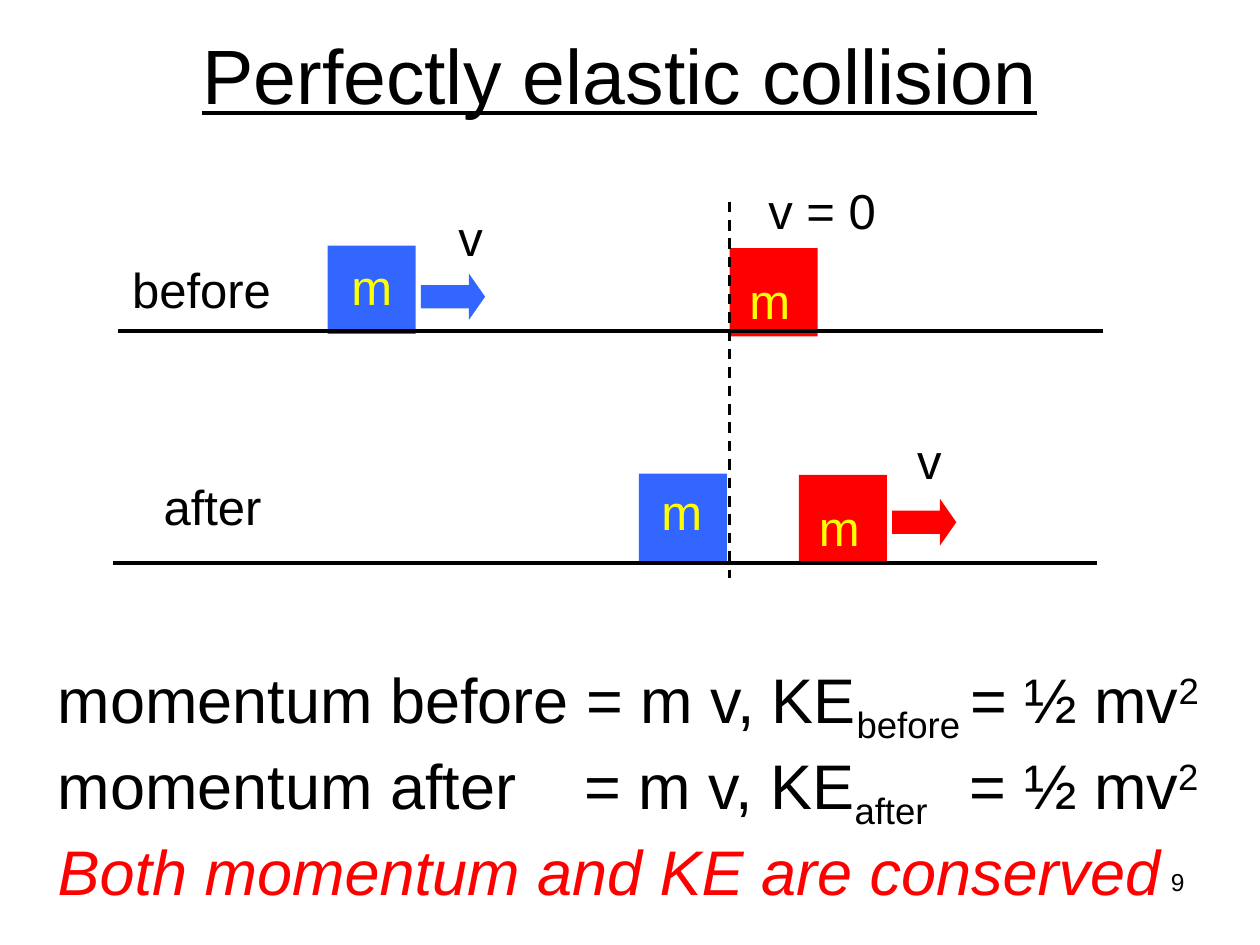
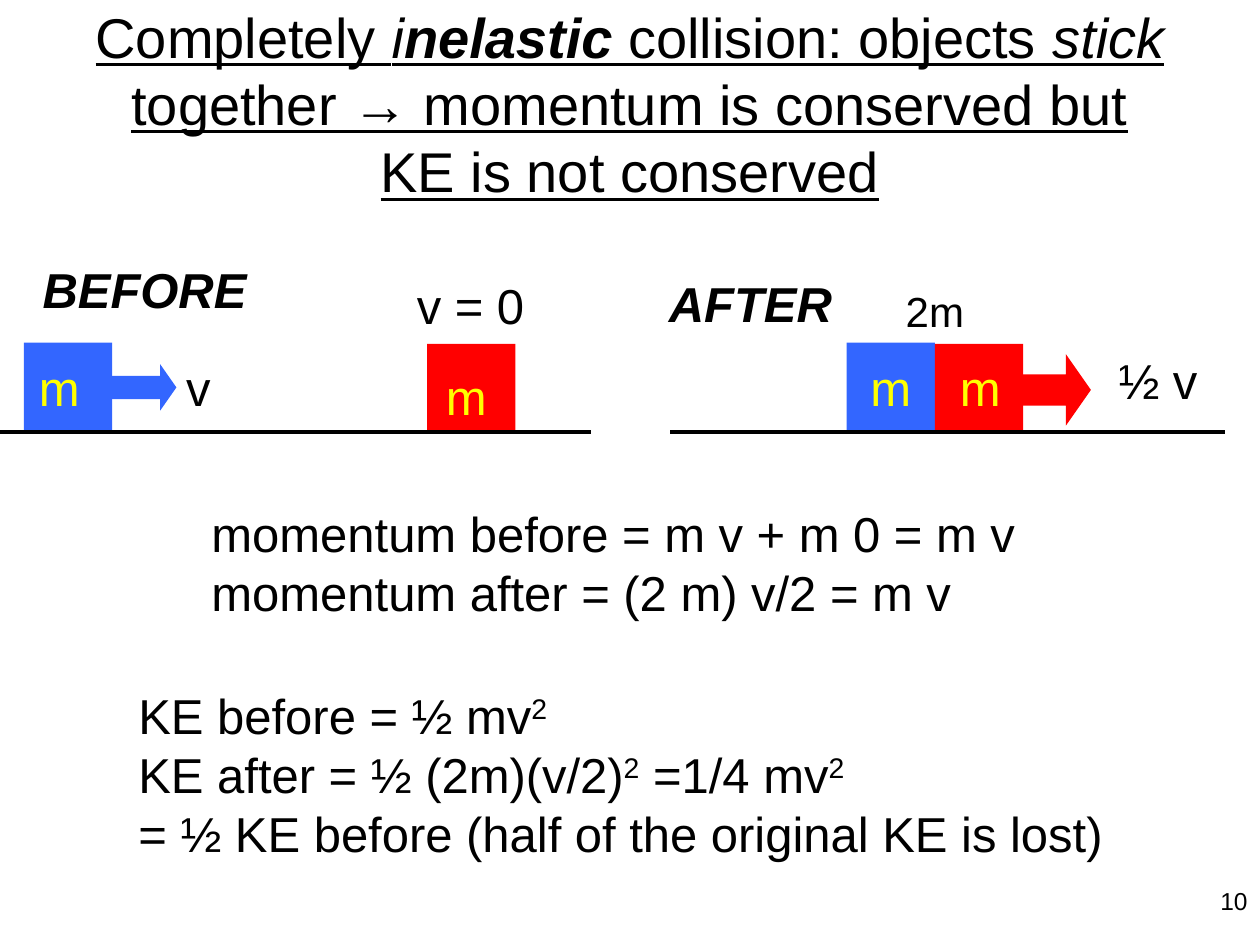
from dataclasses import dataclass

from lxml.etree import SubElement
from pptx import Presentation
from pptx.dml.color import RGBColor
from pptx.enum.dml import MSO_LINE_DASH_STYLE as Dash
from pptx.enum.shapes import MSO_CONNECTOR as Connector, MSO_SHAPE as Shape
from pptx.enum.text import MSO_ANCHOR as Anchor, MSO_AUTO_SIZE as AutoSize, PP_ALIGN as Align
from pptx.oxml.ns import qn
from pptx.util import Pt

PX = 9144  # 100 px to the inch


@dataclass(frozen=True)
class Theme:
    font: str = "Arial"
    ink: RGBColor = RGBColor(0x00, 0x00, 0x00)
    paper: RGBColor = RGBColor(0xFF, 0xFF, 0xFF)
    blue: RGBColor = RGBColor(0x33, 0x66, 0xFF)
    red: RGBColor = RGBColor(0xFF, 0x00, 0x00)
    yellow: RGBColor = RGBColor(0xFF, 0xFF, 0x00)
    title: int = 44
    long_title: int = 32
    formula: int = 36
    body: int = 28
    small: int = 24
    number: int = 14


theme = Theme()
BLOCK = 70
ARROW = (51, 37)
LABEL_HEIGHT = 57
SUB, SUPER = {"baseline": -25000}, {"baseline": 30000}
ITALIC, STRONG = {"italic": True}, {"bold": True, "italic": True}


def write(frame, paragraphs, size, color=theme.ink, align=Align.LEFT, **shared):
    """Fill a text frame; a paragraph is a list of (text, style) spans."""
    for index, spans in enumerate(paragraphs):
        para = frame.paragraphs[0] if index == 0 else frame.add_paragraph()
        para.alignment = align
        for text, style in spans:
            style = {**shared, **style}
            for line_index, line in enumerate(text.split("\n")):
                if line_index:
                    para.add_line_break()
                span = para.add_run()
                span.text = line
                span.font.name = theme.font
                span.font.size = Pt(size)
                span.font.color.rgb = style.get("color", color)
                span.font.bold = style.get("bold", False)
                span.font.italic = style.get("italic", False)
                span.font.underline = style.get("underline", False)
                if "baseline" in style:
                    span.font._element.set("baseline", str(style["baseline"]))


def add_text(page, at, paragraphs, size, wrap=True, fit=True, **style):
    box = page.shapes.add_textbox(*(value * PX for value in at))
    box.text_frame.word_wrap = wrap
    box.text_frame.auto_size = AutoSize.SHAPE_TO_FIT_TEXT if fit else AutoSize.NONE
    write(box.text_frame, paragraphs, size, **style)
    return box


deck = Presentation()
deck.slide_width, deck.slide_height = 1000 * PX, 750 * PX

# Blocks: left, top, colour, left and top of the "m".
# Arrows: left, top, colour, outline width. Tracks: left, right, y.
# Labels: left, top, width, text, style.
scenes = [
    {
        "title": [("Perfectly elastic collision", {})],
        "title_at": (42, 10, 900, 97),
        "title_size": theme.title,
        "blocks": [
            (260, 195, theme.blue, 269, 199),
            (579, 197, theme.red, 585, 210),
            (507, 376, theme.blue, 515, 377),
            (634, 377, theme.red, 640, 390),
        ],
        "arrows": [(334, 217, theme.blue, 0), (708, 396, theme.red, 0)],
        "tracks": [(94, 875, 263), (90, 871, 447)],
        "labels": [
            (354, 160, 40, "v", {}),
            (95, 201, 131, "before", {}),
            (718, 337, 40, "v", {}),
            (120, 373, 98, "after", {}),
            (600, 138, 106, "v = 0", {}),
        ],
        "number": ("9", (717, 683, 233, 52)),
    },
    {
        "title": [
            ("Completely ", {}),
            ("i", ITALIC),
            ("nelastic ", STRONG),
            ("collision: objects ", {}),
            ("stick", ITALIC),
            (" together → momentum is conserved but\nKE is not conserved", {}),
        ],
        "title_at": (0, 0, 1000, 164),
        "title_size": theme.long_title,
        "blocks": [
            (19, 272, theme.blue, 21, 279),
            (339, 273, theme.red, 344, 286),
            (672, 272, theme.blue, 681, 279),
            (742, 273, theme.red, 752, 279),
        ],
        "arrows": [(89, 289, theme.blue, 0), (811, 291, theme.red, 4.5)],
        "tracks": [(0, 469, 343), (532, 972, 343)],
        "labels": [
            (138, 279, 40, "v", {}),
            (24, 201, 184, "BEFORE", STRONG),
            (521, 212, 151, "AFTER", STRONG),
            (321, 214, 106, "v = 0", {}),
            (878, 273, 83, "½ v", {}),
        ],
        "number": ("10", (945, 698, 55, 52)),
    },
]

pages = []
for scene in scenes:
    page = deck.slides.add_slide(deck.slide_layouts[5])
    pages.append(page)

    title = page.shapes.title
    title.left, title.top, title.width, title.height = (v * PX for v in scene["title_at"])
    title.text_frame.word_wrap = True
    title.text_frame.auto_size = AutoSize.NONE
    title.text_frame.vertical_anchor = Anchor.MIDDLE
    write(title.text_frame, [scene["title"]], scene["title_size"],
          align=Align.CENTER, underline=True)

    solids = [(Shape.RECTANGLE, left, top, BLOCK, BLOCK, color, 0)
              for left, top, color, *_ in scene["blocks"]]
    solids += [(Shape.RIGHT_ARROW, left, top, *ARROW, color, outline)
               for left, top, color, outline in scene["arrows"]]
    for kind, left, top, width, height, color, outline in solids:
        solid = page.shapes.add_shape(kind, left * PX, top * PX, width * PX, height * PX)
        solid.shadow.inherit = False
        solid.fill.solid()
        solid.fill.fore_color.rgb = color
        if kind == Shape.RIGHT_ARROW:
            solid.adjustments[1] = 0.35
        if outline:
            solid.line.color.rgb = color
            solid.line.width = Pt(outline)
            SubElement(solid._element.spPr.find(qn("a:ln")), qn("a:miter"), lim="800000")
        else:
            solid.line.fill.background()

    lines = [(left, y, right, y, 2.25, None) for left, right, y in scene["tracks"]]
    if page is pages[0]:
        lines.append((579, 160, 579, 459, 1.5, Dash.DASH))
    for *ends, weight, dash in lines:
        line = page.shapes.add_connector(Connector.STRAIGHT, *(v * PX for v in ends))
        line.line.color.rgb = theme.ink
        line.line.width = Pt(weight)
        if dash:
            line.line.dash_style = dash
        SubElement(line._element.spPr, qn("a:effectLst"))

    masses = [(left, top, 53, "m", {"color": theme.yellow})
              for *_, left, top in scene["blocks"]]
    for left, top, width, text, style in masses + scene["labels"]:
        add_text(page, (left, top, width, LABEL_HEIGHT), [[(text, style)]],
                 theme.body, wrap=False)

    number, number_at = scene["number"]
    add_text(page, number_at, [[(number, {})]], theme.number, fit=False, align=Align.RIGHT)

elastic, inelastic = pages

formulas = add_text(elastic, (36, 519, 957, 192), [
    [("momentum before = m v, KE", {}), ("before ", SUB), ("= ½ mv", {}), ("2", SUPER)],
    [("momentum after\t= m v, KE", {}), ("after", SUB), ("\t= ½ mv", {}), ("2", SUPER)],
    [("Both momentum and KE are conserved", {"color": theme.red, "italic": True})],
], theme.formula)
# The second line's equals signs stand under those of the first.
tabs = SubElement(formulas.text_frame.paragraphs[1]._p.get_or_add_pPr(), qn("a:tabLst"))
for stop in (418, 724):
    SubElement(tabs, qn("a:tab"), pos=str(stop * PX), algn="l")

momentum = add_text(inelastic, (158, 395, 679, 104), [
    [("momentum before = m v + m 0 = m v\nmomentum after = (2 m) v/2 = m v", {})],
], theme.body)
momentum.line.color.rgb = theme.paper
momentum.line.width = Pt(0.75)

add_text(inelastic, (709, 222, 66, 50), [[("2m", {})]], theme.small, wrap=False)

add_text(inelastic, (100, 539, 799, 151), [
    [("KE before = ½ mv", {}), ("2", SUPER)],
    [("KE after = ½ (2m)(v/2)", {}), ("2", SUPER), (" =1/4 mv", {}), ("2", SUPER)],
    [("= ½ KE before (half of the original KE is lost)", {})],
], theme.body)

deck.save("out.pptx")
